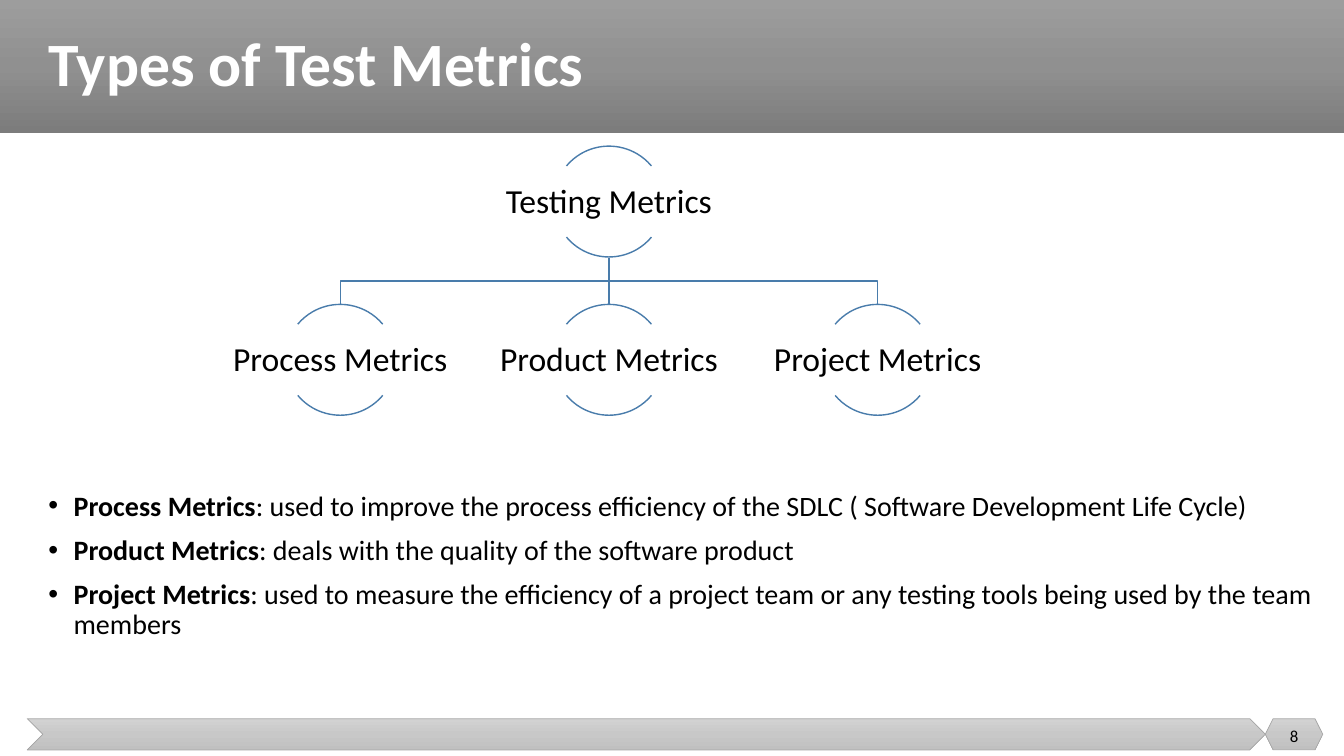
"""Builds the slide on the types of test metrics."""
from copy import deepcopy
from pptx import Presentation, util as u
from pptx.dml.color import RGBColor
from pptx.enum import shapes, text
from pptx.oxml.ns import qn
from lxml import etree


def paint(color, hex_color):
    color.rgb = RGBColor.from_string(hex_color)


def write(paragraph, size, hex_color, align):
    paragraph.font.name = "Calibri"
    paragraph.font.size = u.Pt(size)
    paint(paragraph.font.color, hex_color)
    paragraph.alignment = align


deck = Presentation()
deck.slide_width, deck.slide_height = u.Inches(13.33), u.Inches(7.5)
slide = deck.slides.add_slide(deck.slide_layouts[1])
heading, definitions = slide.placeholders

HEADER, FOOTER = ("9D9D9D", "909090", "7C7C7C"), ("D2D2D2", "C8C8C8", "C0C0C0")
BLUE, BLACK = "497CAB", "000000"
LEFT, CENTER = text.PP_ALIGN.LEFT, text.PP_ALIGN.CENTER

for preset, place, tones in [
    (shapes.MSO_SHAPE.RECTANGLE, (0, 0, 13.33, 1.32), HEADER),
    (shapes.MSO_SHAPE.CHEVRON, (0.27, 7.13, 12.28, 0.31), FOOTER),
    (shapes.MSO_SHAPE.HEXAGON, (12.55, 7.13, 0.57, 0.31), FOOTER),
]:
    band = slide.shapes.add_shape(preset, *map(u.Inches, place))
    band.shadow.inherit = False
    band.fill.gradient()
    band.fill.gradient_angle = 270
    first = band.fill.gradient_stops[0]._gs
    first.addnext(deepcopy(first))
    for stop, tone, position in zip(band.fill.gradient_stops, tones, (0, 0.5, 1)):
        paint(stop.color, tone)
        stop.position = position
    if tones is FOOTER:
        paint(band.line.color, "A5A5A5")
        band.line.width = u.Pt(0.5)
    else:
        band.line.fill.background()

slide.shapes._spTree.append(heading._element)
heading.left, heading.top, heading.width, heading.height = map(u.Inches, (0.38, 0, 12.74, 1.32))
heading.text_frame.text = "Types of Test Metrics"
heading.text_frame.vertical_anchor = text.MSO_ANCHOR.MIDDLE
title_line = heading.text_frame.paragraphs[0]
write(title_line, 44, "FFFFFF", LEFT)
title_line.font.bold = True
title_line.line_spacing = 0.9

CIRCLE, SPACING = 1.1, 2.665
root_x, root_y, child_y = 6.04, 1.45, 3.02
root_bottom = root_y + CIRCLE + 0.01
fork_y = (root_bottom + child_y) / 2

for side in (1, -1):
    child_x = root_x + side * SPACING
    outline = slide.shapes.build_freeform(u.Inches(root_x), u.Inches(root_bottom))
    corners = [(root_x, fork_y), (child_x, fork_y), (child_x, child_y)]
    outline.add_line_segments([(u.Inches(x), u.Inches(y)) for x, y in corners], close=False)
    branch = outline.convert_to_shape()
    branch.shadow.inherit = False
    branch.fill.background()
    paint(branch.line.color, BLUE)
    branch.line.width = u.Pt(1)

stem = slide.shapes.add_connector(
    shapes.MSO_CONNECTOR.STRAIGHT, *map(u.Inches, (root_x, root_bottom, root_x, child_y)))
etree.SubElement(stem._element.spPr, qn("a:effectLst"))
paint(stem.line.color, BLUE)
stem.line.width = u.Pt(1)

for metric, center_x, top in [
    ("Testing Metrics", root_x, root_y),
    ("Process Metrics", root_x - SPACING, child_y),
    ("Product Metrics", root_x, child_y),
    ("Project Metrics", root_x + SPACING, child_y),
]:
    for start, end in ((132, 192), (24, 84)):
        arc = slide.shapes.add_shape(
            shapes.MSO_SHAPE.ARC, *map(u.Inches, (center_x - CIRCLE / 2, top, CIRCLE, CIRCLE)))
        arc.adjustments[0], arc.adjustments[1] = start, end
        arc.shadow.inherit = False
        arc.fill.background()
        paint(arc.line.color, BLUE)
        arc.line.width = u.Pt(1)
    label = slide.shapes.add_textbox(*map(u.Inches, (center_x - 1.1, top + 0.2, 2.2, 0.71))).text_frame
    label.word_wrap = True
    label.vertical_anchor = text.MSO_ANCHOR.MIDDLE
    label.margin_left = label.margin_right = 0
    label.margin_top = label.margin_bottom = u.Inches(0.02)
    label.text = metric
    write(label.paragraphs[0], 24, BLACK, CENTER)
    label.paragraphs[0].line_spacing = 0.9

page = slide.shapes.add_textbox(*map(u.Inches, (12.55, 7.1, 0.57, 0.4))).text_frame
page.word_wrap = True
page.vertical_anchor = text.MSO_ANCHOR.MIDDLE
page.text = "8"
write(page.paragraphs[0], 12, BLACK, CENTER)

slide.shapes._spTree.append(definitions._element)
definitions.left, definitions.top, definitions.width, definitions.height = map(
    u.Inches, (0.38, 4.83, 12.74, 2.1))
meanings = definitions.text_frame
meanings.auto_size = text.MSO_AUTO_SIZE.NONE
meanings.text = "\n".join(["Process Metrics", "Product Metrics", "Project Metrics"])
for entry, meaning in zip(meanings.paragraphs, [
    ": used to improve the process efficiency of the SDLC ( Software Development Life Cycle)",
    ": deals with the quality of the software product",
    ": used to measure the efficiency of a project team or any testing tools being used by the team members",
]):
    entry.runs[0].font.bold = True
    entry.add_run().text = meaning
    write(entry, 20, BLACK, LEFT)
    entry.line_spacing = 0.9
    entry.space_before = u.Pt(10)
    properties = entry._p.get_or_add_pPr()
    properties.set("marL", str(u.Inches(0.25)))
    properties.set("indent", str(u.Inches(-0.25)))

deck.save("out.pptx")
